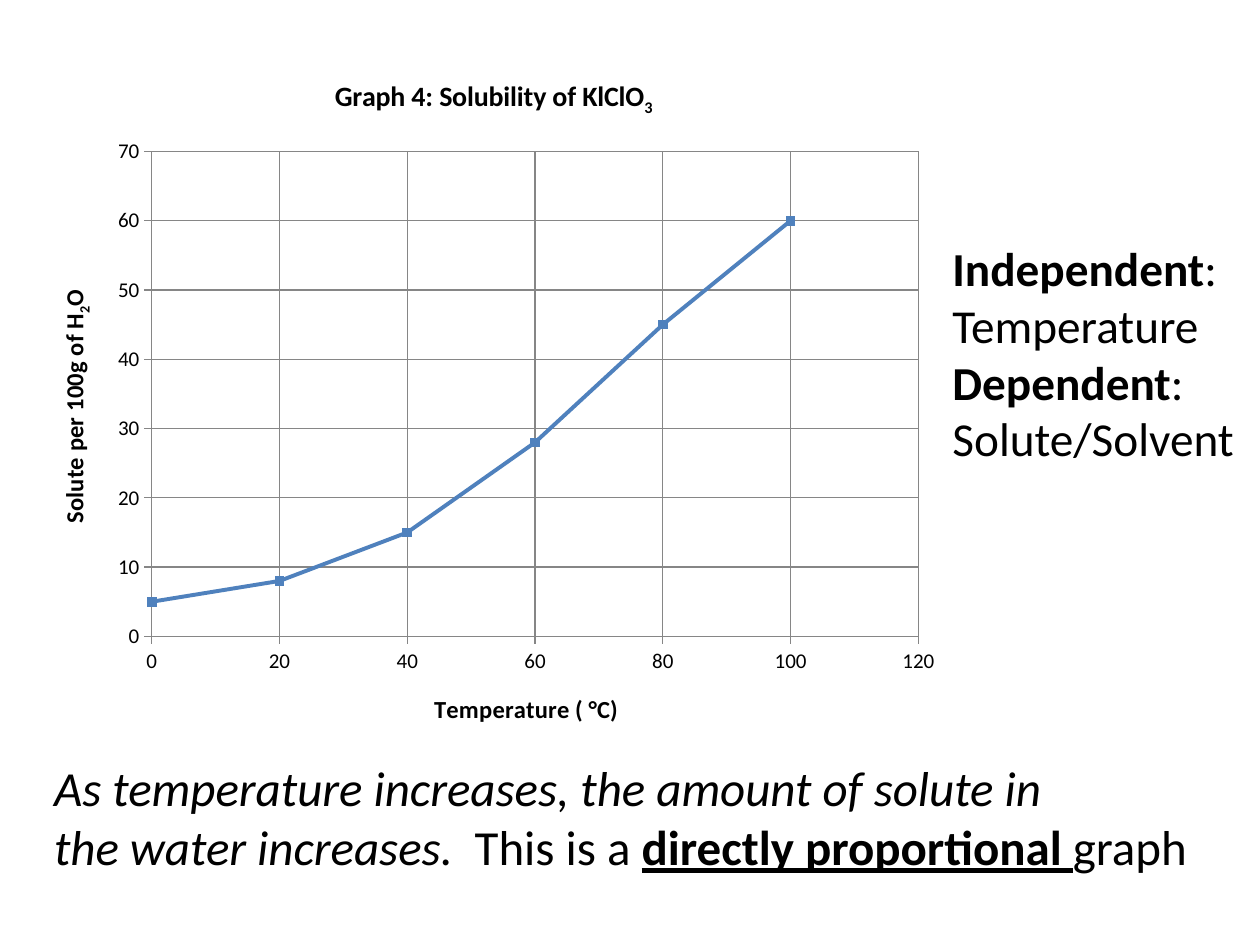
from dataclasses import dataclass, field
from typing import Any

import lxml.etree
import pptx
import pptx.chart.data
import pptx.dml.color
import pptx.enum.chart
import pptx.enum.text
import pptx.oxml
import pptx.oxml.ns
import pptx.util

Cm = pptx.util.Cm
Pt = pptx.util.Pt
FONT = "Calibri"
BLACK = "000000"
GRID = "868686"
BLUE = "4F81BD"


@dataclass
class Span:
    text: str
    style: dict[str, Any] = field(default_factory=dict)


@dataclass
class TextBlock:
    left: float
    top: float
    width: float
    height: float
    size: float
    lines: list[list[Span]]


BOLD = {"bold": True}
ITALIC = {"italic": True}
SUBSCRIPT = {"subscript": True}

BLOCKS = [
    TextBlock(18.95, 4.7, 6.45, 5.05, 27, [
        [Span("Independent", BOLD), Span(":")],
        [Span("Temperature")],
        [Span("Dependent", BOLD), Span(":")],
        [Span("Solute/Solvent")],
    ]),
    TextBlock(0.84, 15.14, 20.85, 2.64, 28, [
        [Span("As temperature increases, the amount of solute in", ITALIC)],
        [Span("the water increases.", ITALIC)],
    ]),
    TextBlock(9.32, 16.33, 15.04, 1.45, 28, [
        [Span("This is a "),
         Span("directly proportional ", {"bold": True, "underline": True}),
         Span("graph")],
    ]),
]


def colour(value: str) -> pptx.dml.color.RGBColor:
    return pptx.dml.color.RGBColor.from_string(value)


def format_font(font: Any, size: float, **style: Any) -> None:
    for name, value in {"name": FONT, "size": Pt(size), **style}.items():
        setattr(font, name, value)
    font.color.rgb = colour(BLACK)


def write_line(para: Any, spans: list[Span], size: float, **shared: Any) -> None:
    for item in spans:
        style = {**shared, **item.style}
        subscript = style.pop("subscript", False)
        span = para.add_run()
        span.text = item.text
        format_font(span.font, size, **style)
        if subscript:
            span._r.get_or_add_rPr().set("baseline", "-25000")


def add_block(page: Any, block: TextBlock) -> None:
    box = page.shapes.add_textbox(
        Cm(block.left), Cm(block.top), Cm(block.width), Cm(block.height))
    frame = box.text_frame
    frame.word_wrap = False
    frame.auto_size = pptx.enum.text.MSO_AUTO_SIZE.SHAPE_TO_FIT_TEXT
    for index, spans in enumerate(block.lines):
        para = frame.paragraphs[0] if index == 0 else frame.add_paragraph()
        write_line(para, spans, block.size)


def format_axis(axis: Any, title: list[Span], maximum: int, step: int) -> None:
    settings = {
        "minimum_scale": 0,
        "maximum_scale": maximum,
        "major_unit": step,
        "has_major_gridlines": True,
        "major_tick_mark": pptx.enum.chart.XL_TICK_MARK.OUTSIDE,
        "minor_tick_mark": pptx.enum.chart.XL_TICK_MARK.NONE,
    }
    for name, value in settings.items():
        setattr(axis, name, value)
    for line in (axis.format.line, axis.major_gridlines.format.line):
        line.color.rgb = colour(GRID)
        line.width = Pt(0.75)
    format_font(axis.tick_labels.font, 12)
    write_line(axis.axis_title.text_frame.paragraphs[0], title, 14, bold=True)


def place_plot(chart: Any, **fractions: float) -> None:
    area = chart._chartSpace.chart.plotArea
    for old in area.findall(pptx.oxml.ns.qn("c:layout")):
        area.remove(old)
    layout = lxml.etree.Element(pptx.oxml.ns.qn("c:layout"))
    manual = lxml.etree.SubElement(layout, pptx.oxml.ns.qn("c:manualLayout"))
    settings = {"layoutTarget": "inner", "xMode": "edge", "yMode": "edge", **fractions}
    for name, value in settings.items():
        lxml.etree.SubElement(
            manual, pptx.oxml.ns.qn(f"c:{name}")).set("val", str(value))
    area.insert(0, layout)


def add_solubility_chart(page: Any) -> None:
    data = pptx.chart.data.XyChartData()
    points = data.add_series("Series 1")
    for temperature, solute in zip(range(0, 101, 20), (5, 8, 15, 28, 45, 60)):
        points.add_data_point(temperature, solute)
    chart = page.shapes.add_chart(
        pptx.enum.chart.XL_CHART_TYPE.XY_SCATTER_SMOOTH,
        Cm(0.64), Cm(1.07), Cm(18.62), Cm(14.17), data).chart
    format_font(chart.font, 10)
    chart.has_legend = False
    chart.has_title = True
    write_line(chart.chart_title.text_frame.paragraphs[0],
               [Span("Graph 4: Solubility of KlClO"), Span("3", SUBSCRIPT)],
               16, bold=True)
    format_axis(chart.category_axis, [Span("Temperature ( °C)")], 120, 20)
    format_axis(chart.value_axis,
                [Span("Solute per 100g of H"), Span("2", SUBSCRIPT), Span("O")], 70, 10)
    body = chart.value_axis.axis_title.text_frame._txBody.bodyPr
    body.set("rot", "-5400000")
    body.set("vert", "horz")
    place_plot(chart, x=0.13, y=0.14, w=0.83, h=0.69)

    chart.plots[0].vary_by_categories = False
    series = chart.plots[0].series[0]
    series.smooth = True
    series.format.line.color.rgb = colour(BLUE)
    series.format.line.width = Pt(2.25)
    series.marker.style = pptx.enum.chart.XL_MARKER_STYLE.SQUARE
    series.marker.size = 5
    series.marker.format.fill.solid()
    series.marker.format.fill.fore_color.rgb = colour(BLUE)
    series.marker.format.line.color.rgb = colour(BLUE)


def main() -> None:
    deck = pptx.Presentation()
    deck.slide_width = Cm(25.4)
    deck.slide_height = Cm(19.05)
    page = deck.slides.add_slide(deck.slide_layouts[6])
    add_solubility_chart(page)
    for block in BLOCKS:
        add_block(page, block)
    deck.save("out.pptx")


if __name__ == "__main__":
    main()
